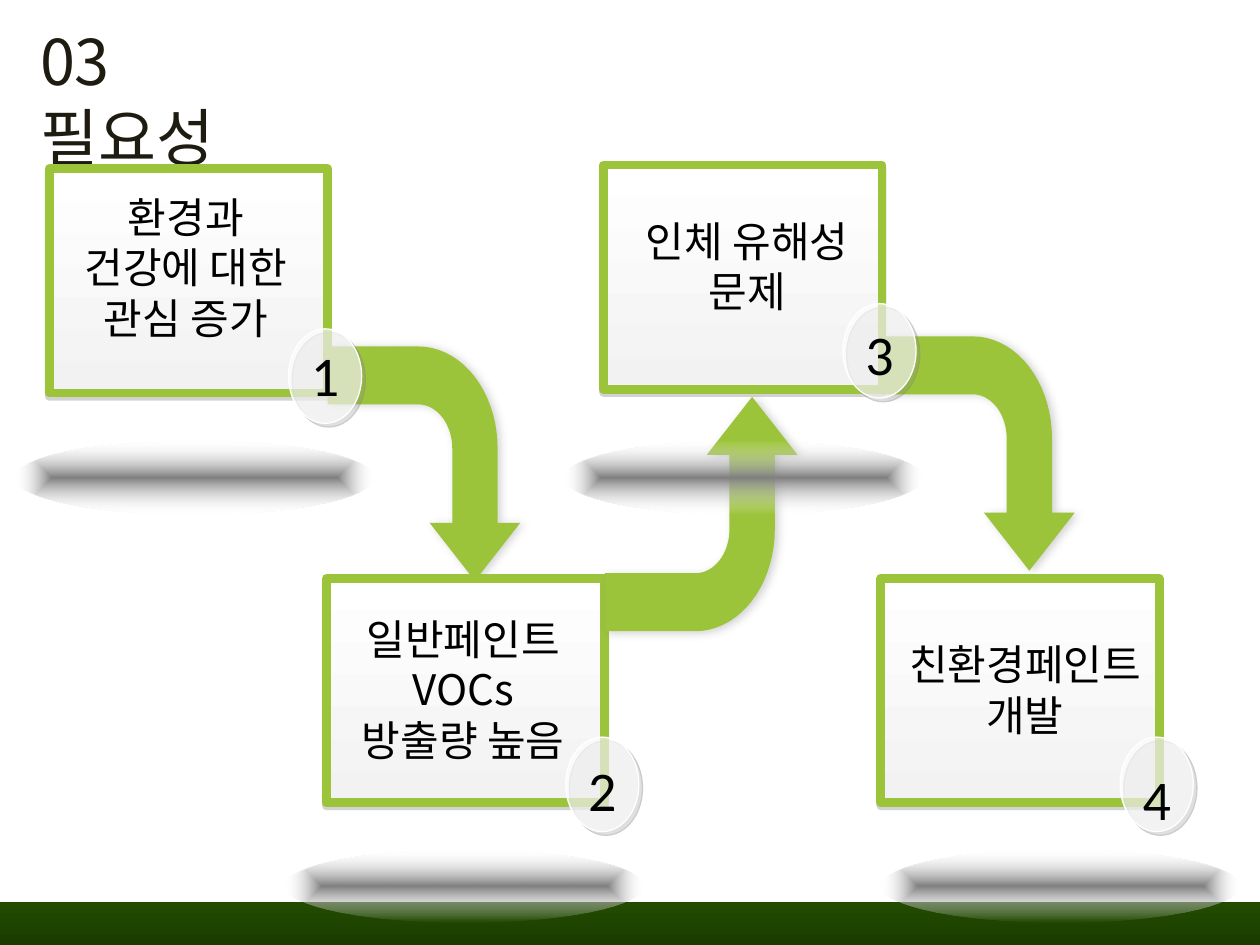
import math
from typing import NamedTuple

from lxml import etree
from pptx import Presentation
from pptx import util as u
from pptx.dml.color import RGBColor
from pptx.enum import shapes, text
from pptx.oxml.ns import qn

WIDTH, HEIGHT = 10, 7.5
LEFT, COLUMN = 0.39, 2.2
CARD_W, CARD_H = 2.21, 1.78
KOREAN, LATIN = "Noto Sans CJK KR", "Calibri"
GREEN, GREY, WHITE, BLACK = "9CC43B", "808080", "FFFFFF", "000000"


class Box(NamedTuple):
    left: float
    top: float
    width: float
    height: float

    def emu(self) -> list:
        return [u.Inches(value) for value in self]


class Stop(NamedTuple):
    share: int
    color: str
    alpha: int = 100


class Card(NamedTuple):
    column: int
    top: float
    words: str
    words_box: Box
    glow_left: float
    glow_top: float
    badge_top: float
    number_top: float


class Arrow(NamedTuple):
    column: int
    start: float
    direction: int


CARDS = [
    Card(0, 1.34, "환경과\n건강에 대한\n관심 증가", Box(0.39, 1.47, 2.17, 1.62),
         0.12, 3.5, 2.61, 2.65),
    Card(1, 4.59, "일반페인트 VOCs\n방출량 높음", Box(2.6, 4.82, 2.15, 1.31),
         2.27, 6.74, 5.85, 5.95),
    Card(2, 1.31, "인체 유해성\n문제", Box(4.92, 1.66, 2.02, 0.91),
         4.48, 3.5, 2.41, 2.49),
    Card(3, 4.59, "친환경페인트\n개발", Box(7.01, 5.02, 2.25, 0.91),
         7, 6.74, 5.85, 6.02),
]
ARROWS = [Arrow(1, 2.75, 1), Arrow(2, 5.01, -1), Arrow(3, 2.67, 1)]


def rgb(color: str) -> RGBColor:
    return RGBColor.from_string(color)


def add_color(parent, color: str, alpha: int) -> None:
    node = etree.SubElement(parent, qn("a:srgbClr"), val=color)
    if alpha < 100:
        etree.SubElement(node, qn("a:alpha"), val=str(alpha * 1000))


def fill_gradient(shape, stops: list[Stop], angle: int | None = None) -> None:
    """Fill along an angle, or outwards from the centre when there is none."""
    gradient = etree.Element(qn("a:gradFill"), rotWithShape="1")
    stop_list = etree.SubElement(gradient, qn("a:gsLst"))
    for stop in stops:
        node = etree.SubElement(stop_list, qn("a:gs"), pos=str(stop.share * 1000))
        add_color(node, stop.color, stop.alpha)
    if angle is None:
        path = etree.SubElement(gradient, qn("a:path"))
        path.set("path", "shape")
        sides = dict.fromkeys("ltrb", "50000")
        etree.SubElement(path, qn("a:fillToRect"), sides)
    else:
        etree.SubElement(gradient, qn("a:lin"), ang=str(angle * 60000), scaled="0")
    shape.fill.background()
    empty_fill = shape._element.spPr.find(qn("a:noFill"))
    empty_fill.getparent().replace(empty_fill, gradient)


def cast_shadow(shape, alpha: int, blur: float, distance: float, angle: int) -> None:
    shape.shadow.inherit = False
    effects = shape._element.spPr.find(qn("a:effectLst"))
    node = etree.SubElement(
        effects, qn("a:outerShdw"), blurRad=str(u.Pt(blur)),
        dist=str(u.Pt(distance)), dir=str(angle * 60000), algn="tl", rotWithShape="0")
    add_color(node, GREY, alpha)


def add_plain(slide, kind, box: Box):
    shape = slide.shapes.add_shape(kind, *box.emu())
    shape.shadow.inherit = False
    shape.line.fill.background()
    return shape


def outline(shape, color: str, points: float) -> None:
    shape.line.color.rgb = rgb(color)
    shape.line.width = u.Pt(points)


def add_words(slide, box: Box, words: str, size: int, font: str, color: str = BLACK,
              align=text.PP_ALIGN.LEFT, wrap: bool = True) -> None:
    frame = slide.shapes.add_textbox(*box.emu()).text_frame
    frame.word_wrap = wrap
    frame.auto_size = text.MSO_AUTO_SIZE.SHAPE_TO_FIT_TEXT
    frame.text = words
    for paragraph in frame.paragraphs:
        paragraph.alignment = align
        for run in paragraph.runs:
            run.font.size = u.Pt(size)
            run.font.name = font
            run.font.color.rgb = rgb(color)
            east_asian = etree.SubElement(run.font._element, qn("a:ea"))
            east_asian.set("typeface", font)


def quarter(radius_x: float, radius_y: float) -> list[tuple[float, float]]:
    """Points of a quarter turn from heading right to heading down."""
    angles = [math.radians(degree) for degree in range(0, 91, 5)]
    return [(0.72 + radius_x * math.sin(a), 0.81 - radius_y * math.cos(a))
            for a in angles]


def add_arrow(slide, arrow: Arrow) -> None:
    head = [(1.35, 1.4), (1.53, 1.4), (1.17, 1.86), (0.81, 1.4), (0.99, 1.4)]
    points = [(0, 0), *quarter(0.63, 0.81), *head,
              *reversed(quarter(0.27, 0.35)), (0, 0.46)]
    left = LEFT + COLUMN * arrow.column + 0.01
    bent = [(u.Inches(left + x), u.Inches(arrow.start + arrow.direction * y))
            for x, y in points]
    builder = slide.shapes.build_freeform(*bent[0])
    builder.add_line_segments(bent[1:], close=True)
    shape = builder.convert_to_shape()
    shape.fill.solid()
    shape.fill.fore_color.rgb = rgb(GREEN)
    shape.line.fill.background()
    cast_shadow(shape, 35, 5, 1.8, 24)


def add_glow(slide, card: Card) -> None:
    glow = add_plain(slide, shapes.MSO_SHAPE.OVAL,
                     Box(card.glow_left, card.glow_top, 2.84, 0.58))
    fill_gradient(glow, [Stop(0, GREY), Stop(100, WHITE, 0)])


def add_badge(slide, card: Card, left: float) -> None:
    badge = add_plain(slide, shapes.MSO_SHAPE.OVAL,
                      Box(left, card.badge_top, 0.58, 0.75))
    badge.fill.solid()
    badge.fill.fore_color.rgb = rgb(WHITE)
    color = badge._element.spPr.find(qn("a:solidFill"))[0]
    etree.SubElement(color, qn("a:alpha"), val="62000")
    outline(badge, WHITE, 0.75)
    cast_shadow(badge, 40, 0, 3, 45)
    add_words(slide, Box(left + 0.08, card.number_top, 0.43, 0.64),
              str(card.column + 1), 32, LATIN, wrap=False)


def add_card(slide, card: Card) -> None:
    left = LEFT + COLUMN * card.column
    panel = add_plain(slide, shapes.MSO_SHAPE.ROUNDED_RECTANGLE,
                      Box(left, card.top, CARD_W, CARD_H))
    panel.adjustments[0] = 0
    fill_gradient(panel, [Stop(0, WHITE), Stop(100, "F2F2F2")], 90)
    outline(panel, GREEN, 5)
    cast_shadow(panel, 35, 0, 1.8, 90)
    add_words(slide, card.words_box, card.words, 24, KOREAN,
              align=text.PP_ALIGN.CENTER)
    add_glow(slide, card)
    add_badge(slide, card, left + 1.9)


def main() -> None:
    deck = Presentation()
    deck.slide_width, deck.slide_height = u.Inches(WIDTH), u.Inches(HEIGHT)
    slide = deck.slides.add_slide(deck.slide_layouts[6])
    footer = add_plain(slide, shapes.MSO_SHAPE.RECTANGLE,
                       Box(0, 7.16, WIDTH, HEIGHT - 7.16))
    fill_gradient(footer, [Stop(0, "1A3C00"), Stop(100, "224C00")], 270)
    add_words(slide, Box(0.22, 0.13, 2.2, 0.71), "03 필요성", 36, KOREAN, "1E1C11")

    first_arrow, *later_arrows = ARROWS
    add_arrow(slide, first_arrow)
    for card in CARDS[:2]:
        add_card(slide, card)
    for arrow in later_arrows:
        add_arrow(slide, arrow)
    for card in CARDS[2:]:
        add_card(slide, card)
    deck.save("out.pptx")


if __name__ == "__main__":
    main()
